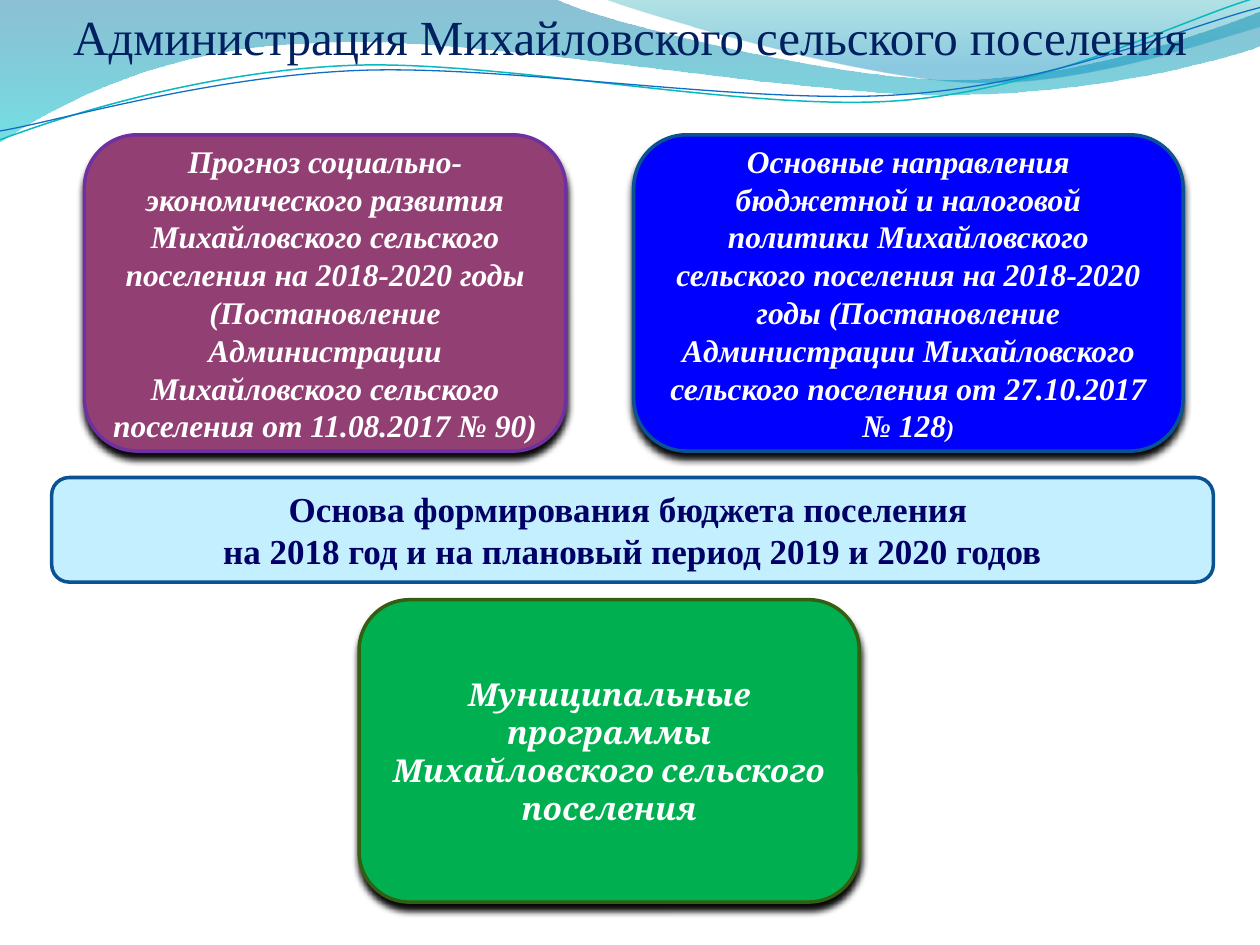
from lxml import etree
from pptx import Presentation
from pptx.dml.color import RGBColor
from pptx.enum import shapes, text
from pptx.oxml.ns import qn
from pptx.util import Inches, Pt

WHITE = RGBColor(0xFF, 0xFF, 0xFF)
NAVY = RGBColor(0x00, 0x20, 0x60)
INK = RGBColor(0x00, 0x00, 0x66)
OUTLINE = RGBColor(0x06, 0x69, 0xC4)
SKY = RGBColor(0xC4, 0xEF, 0xFF)
STEEL = RGBColor(0x0B, 0x52, 0x92)
GREEN = RGBColor(0x00, 0xB0, 0x50)
DARK_GREEN = RGBColor(0x34, 0x5E, 0x12)
PLUM = RGBColor(0x92, 0x40, 0x73)
PURPLE = RGBColor(0x70, 0x30, 0xA0)
BLUE = RGBColor(0x00, 0x00, 0xFF)
BLACK = RGBColor(0x00, 0x00, 0x00)
DEEP_TEAL = RGBColor(0x00, 0x74, 0xA1)
CYAN = RGBColor(0x00, 0xC6, 0xCF)
TEAL = RGBColor(0x00, 0xA1, 0xA9)
OCEAN = RGBColor(0x00, 0x8B, 0xBF)
LINE_TEAL = RGBColor(0x0A, 0xB8, 0xBF)
LINE_BLUE = RGBColor(0x0F, 0x6F, 0xC6)
SERIF = "Times New Roman"
UNITS_PER_INCH = 100

BACK_WAVE = [
    (0, 0), (4.4, -0.01), (4.76, 0.17, 6.64, 0.63, 7.58, 0.63),
    (8.53, 0.63, 9.58, 0.26, 10, 0.09), (10.01, 0.36),
    (9.83, 0.44, 8.7, 0.76, 7.46, 0.75), (6.22, 0.75, 3.82, 0.28, 2.57, 0.34),
    (1.29, 0.36, 0.46, 0.83, -0.01, 1.13),
]
FRONT_WAVE = [
    (4.79, -0.01), (5.09, 0.11, 6.82, 0.62, 7.69, 0.65),
    (8.56, 0.69, 9.61, 0.32, 10, 0.21), (10, 0),
]
TEAL_CURVE = [
    (0, 1.11), (0.48, 0.93, 1.58, 0.57, 2.77, 0.52),
    (3.95, 0.47, 5.93, 0.89, 7.13, 0.8), (8.33, 0.71, 9.38, 0.15, 9.98, -0.02),
]
BLUE_CURVE = [
    (0, 1.04), (0.47, 0.96, 1.64, 0.61, 2.83, 0.56),
    (4.03, 0.51, 5.97, 0.84, 7.17, 0.75), (8.36, 0.67, 9.41, 0.21, 10, 0.06),
]


def add_outline(page, steps, closed):
    steps = [[round(value * UNITS_PER_INCH) for value in step] for step in steps]
    anchors = [step[-2:] for step in steps]
    left, top = (min(values) for values in zip(*anchors))
    builder = page.shapes.build_freeform(*anchors[0], scale=Inches(1) / UNITS_PER_INCH)
    builder.add_line_segments(anchors[1:], close=closed)
    outline = builder.convert_to_shape()
    outline.shadow.inherit = False
    segments = list(outline._element.spPr.iter(qn("a:lnTo")))
    for segment, step in zip(segments, steps[1:]):
        if len(step) == 6:
            bend(segment, step, left, top)
    return outline


def bend(segment, step, left, top):
    curve = etree.Element(qn("a:cubicBezTo"))
    for x, y in zip(step[::2], step[1::2]):
        etree.SubElement(curve, qn("a:pt"), x=str(x - left), y=str(y - top))
    segment.getparent().replace(segment, curve)


def add_wave(page, steps, stops):
    wave = add_outline(page, steps, True)
    wave.line.fill.background()
    wave.fill.gradient()
    wave.fill.gradient_angle = 270
    for stop, (position, color, _) in zip(wave.fill.gradient_stops, stops):
        stop.position = position
        stop.color.rgb = color
    colors = wave._element.spPr.iter(qn("a:srgbClr"))
    for node, (_, _, opacity) in zip(colors, stops):
        etree.SubElement(node, qn("a:alpha"), val=str(opacity * 1000))


def add_curve(page, steps, color, width):
    curve = add_outline(page, steps, False)
    curve.fill.background()
    curve.line.color.rgb = color
    curve.line.width = Pt(width)


def add_shadow(box):
    effects = box._element.spPr.find(qn("a:effectLst"))
    distance = str(Pt(4))
    shadow = etree.SubElement(effects, qn("a:outerShdw"), blurRad=distance,
                              dist=distance, dir="5400000", rotWithShape="0")
    color = etree.SubElement(shadow, qn("a:srgbClr"), val=str(BLACK))
    etree.SubElement(color, qn("a:alpha"), val="96000")


def add_text_outline(span):
    line = etree.Element(qn("a:ln"), w=str(Pt(0.83)))
    fill = etree.SubElement(line, qn("a:solidFill"))
    etree.SubElement(fill, qn("a:srgbClr"), val=str(OUTLINE))
    span._r.get_or_add_rPr().insert(0, line)


def style(para, size, color, name=SERIF, bold=False, italic=False):
    para.alignment = text.PP_ALIGN.CENTER
    para.font.size = Pt(size)
    para.font.name = name
    para.font.color.rgb = color
    para.font.bold = bold
    para.font.italic = italic


def add_panel(page, place, fill, line):
    panel = page.shapes.add_shape(shapes.MSO_SHAPE.ROUNDED_RECTANGLE, *map(Inches, place))
    panel.shadow.inherit = False
    panel.fill.solid()
    panel.fill.fore_color.rgb = fill
    panel.line.color.rgb = line
    panel.line.width = Pt(2)
    panel.text_frame.word_wrap = True
    panel.text_frame.vertical_anchor = text.MSO_ANCHOR.MIDDLE
    return panel


def add_card(page, place, fill, line, words, name=SERIF):
    card = add_panel(page, place, fill, line)
    add_shadow(card)
    para = card.text_frame.paragraphs[0]
    para.add_run().text = words
    style(para, 18, WHITE, name, bold=True, italic=True)
    return para


def add_band(page, place, lines):
    frame = add_panel(page, place, SKY, STEEL).text_frame
    frame.text = "\n".join(lines)
    for para in frame.paragraphs:
        style(para, 20, INK, bold=True)
        add_text_outline(para.runs[0])


def set_title(page, words):
    title = page.shapes.title
    title.left, title.top, title.width, title.height = map(Inches, (0, 0, 10, 0.57))
    frame = title.text_frame
    frame.text = words
    frame.word_wrap = True
    frame.auto_size = text.MSO_AUTO_SIZE.SHAPE_TO_FIT_TEXT
    frame.vertical_anchor = text.MSO_ANCHOR.TOP
    style(frame.paragraphs[0], 28, NAVY)
    page.shapes._spTree.append(title._element)


def main():
    deck = Presentation()
    deck.slide_width, deck.slide_height = Inches(10), Inches(7.5)
    page = deck.slides.add_slide(deck.slide_layouts[5])

    add_wave(page, BACK_WAVE, [(0, DEEP_TEAL, 45), (1, CYAN, 55)])
    add_wave(page, FRONT_WAVE, [(0, TEAL, 30), (0.8, OCEAN, 45)])
    add_curve(page, TEAL_CURVE, LINE_TEAL, 0.85)
    add_curve(page, BLUE_CURVE, LINE_BLUE, 0.75)
    set_title(page, "Администрация Михайловского сельского поселения")

    add_band(page, (0.41, 3.79, 9.22, 0.83),
             ["Основа формирования бюджета поселения ",
              "на 2018 год и на плановый период 2019 и 2020 годов"])
    add_card(page, (2.85, 4.76, 3.97, 2.4), GREEN, DARK_GREEN,
             "Муниципальные программы Михайловского сельского поселения", "Cambria")
    add_card(page, (0.67, 1.07, 3.82, 2.51), PLUM, PURPLE,
             "Прогноз социально-экономического развития Михайловского сельского "
             "поселения на 2018-2020 годы (Постановление Администрации "
             "Михайловского сельского поселения от 11.08.2017 № 90)")
    policy = add_card(page, (5.03, 1.07, 4.36, 2.51), BLUE, STEEL,
                      "Основные направления бюджетной и налоговой политики "
                      "Михайловского сельского поселения на 2018-2020 годы "
                      "(Постановление Администрации Михайловского сельского "
                      "поселения от 27.10.2017 № 128")
    bracket = policy.add_run()
    bracket.text = ")"
    bracket.font.size = Pt(14)

    deck.save("out.pptx")


if __name__ == "__main__":
    main()
